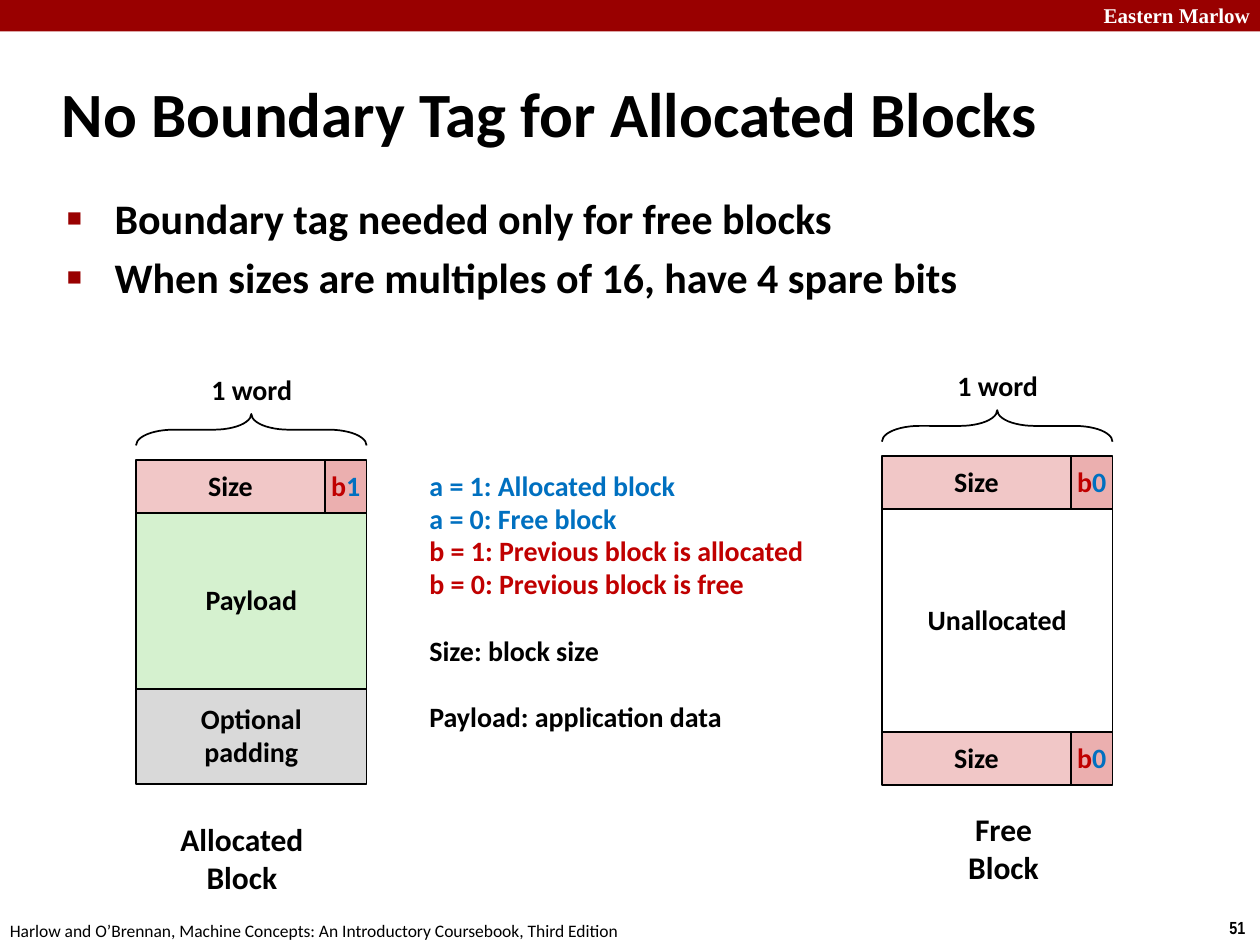
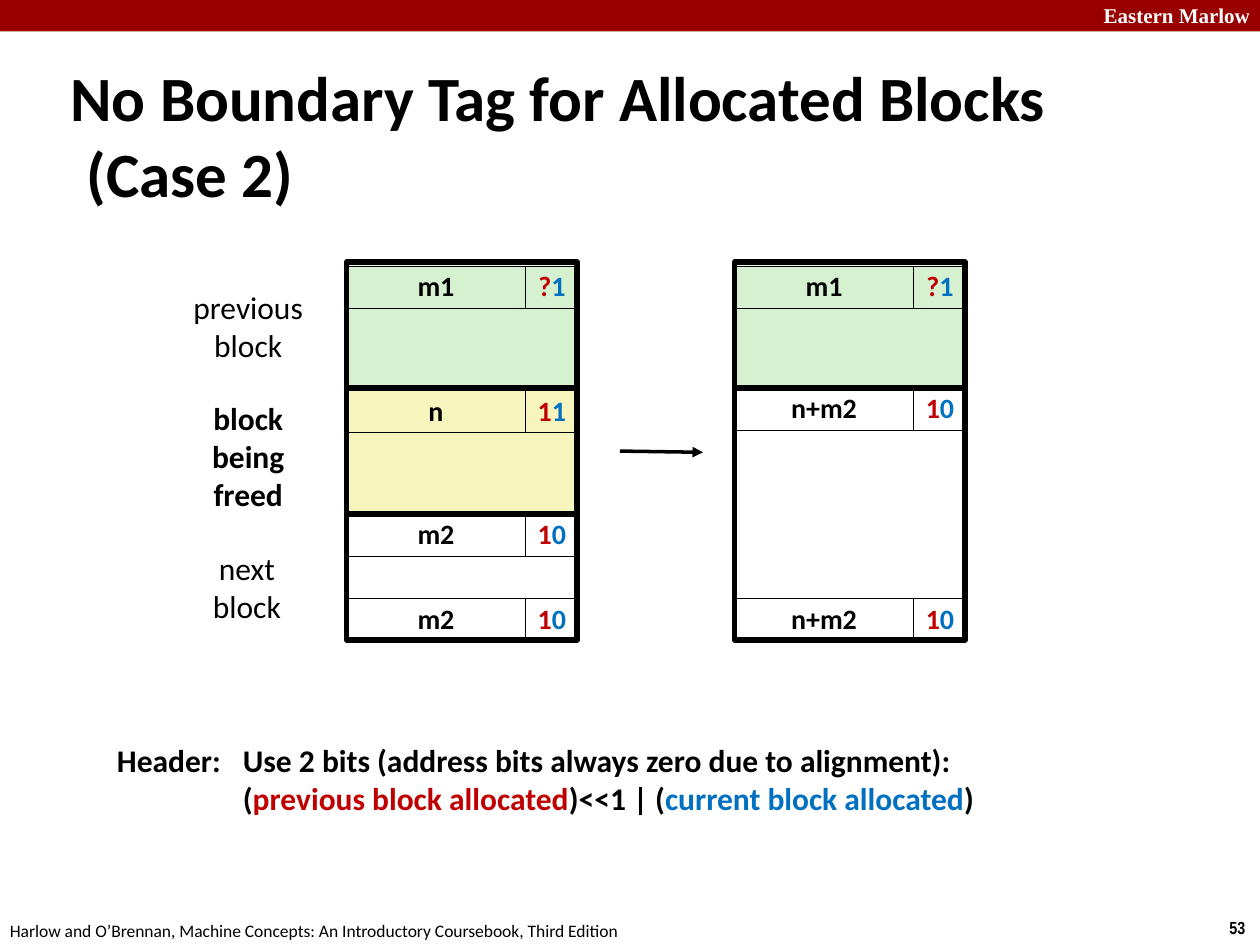
from pptx import Presentation
from pptx.dml.color import RGBColor
from pptx.enum.shapes import MSO_CONNECTOR, MSO_SHAPE
from pptx.enum.text import MSO_ANCHOR, PP_ALIGN
from pptx.oxml.ns import qn
from pptx.util import Inches, Pt
from lxml import etree

RECT, BRACE = MSO_SHAPE.RECTANGLE, MSO_SHAPE.RIGHT_BRACE
STRAIGHT = MSO_CONNECTOR.STRAIGHT
LEFT, CENTER, RIGHT = PP_ALIGN.LEFT, PP_ALIGN.CENTER, PP_ALIGN.RIGHT
TOP, MIDDLE = MSO_ANCHOR.TOP, MSO_ANCHOR.MIDDLE

BLACK, WHITE, BAND = "000000", "FFFFFF", "990000"
RED, BLUE = "C00000", "0070C0"
PINK, ROSE, GREEN, GRAY, YELLOW = "F1C7C7", "EBAFAF", "D5F1CF", "D9D9D9", "F6F5BD"

# Shared content
SCHOOL = "Eastern Marlow"
SOURCE = ("Harlow and O’Brennan, Machine Concepts: "
          "An Introductory Coursebook, Third Edition")

# Slide 1 content
BULLETS = ["Boundary tag needed only for free blocks",
           "When sizes are multiples of 16, have 4 spare bits"]
LEGEND = [[("a = 1: Allocated block", BLUE)],
          [("a = 0: Free block", BLUE)],
          [("b = 1: Previous block is allocated", RED)],
          [("b = 0: Previous block is free", RED)],
          "Size: block size",
          "Payload: application data"]
LEGEND_GAPS = (4, 5)
# Rows: height, fill, text lines, second bit (None for a full-width row)
FORMATS = [
    dict(x=1.08, y=3.65, caption=["Allocated", "Block"], caption_at=(1.33, 6.46, 1.18, 0.71),
         rows=[(0.42, PINK, ["Size"], "1"),
               (1.4, GREEN, ["Payload"], None),
               (0.75, GRAY, ["Optional", "padding"], None)]),
    dict(x=7, y=3.62, caption=["Free", "Block"], caption_at=(7.58, 6.38, 0.77, 0.71),
         rows=[(0.42, PINK, ["Size"], "0"),
               (1.77, None, ["Unallocated"], None),
               (0.42, PINK, ["Size"], "0")]),
]

# Slide 2 content
# Blocks: fill, label, two bits, height in rows, has footer, header offset
HEAPS = [
    (2.75, [(GREEN, "m1", "?1", 3, False, 0.03),
            (YELLOW, "n", "11", 3, False, 0.02),
            (WHITE, "m2", "10", 3, True, 0)]),
    (5.83, [(GREEN, "m1", "?1", 3, False, 0.03),
            (WHITE, "n+m2", "10", 6, True, 0)]),
]
SIDE_LABELS = [(["previous", "block"], (1.42, 2.24, 1.1, 0.71), False),
               (["block", "being", "freed"], (1.58, 3.12, 0.78, 1.01), True),
               (["next", "block"], (1.58, 4.31, 0.76, 0.71), False)]
HEADER_NOTE = ["Header:\tUse 2 bits (address bits always zero due to alignment):",
               [("\t(", BLACK), ("previous block allocated", RED), (")<<1 | (", BLACK),
                ("current block allocated", BLUE), (")", BLACK)]]

WORD_W = 1.83
HEAP_TOP, ROW_H, LABEL_W, BITS_W = 2.08, 1 / 3, 1.42, 0.42


def rgb(color):
    return RGBColor.from_string(color)


def box(at):
    return [Inches(v) for v in at]


def write(tf, paras, size=16, color=BLACK, bold=True, font="Calibri", align=LEFT,
          anchor=TOP, wrap=False, spacing=None, before=None, hang=None):
    """Fill a text frame; a paragraph is a string or a list of (text, colour)."""
    tf.word_wrap, tf.vertical_anchor = wrap, anchor
    for i, para in enumerate(paras):
        p = tf.paragraphs[0] if i == 0 else tf.add_paragraph()
        p.alignment = align
        if spacing:
            p.line_spacing = spacing
        if before is not None:
            p.space_before = Pt(before)
        if hang:
            pPr = p._p.get_or_add_pPr()
            pPr.set("marL", str(Inches(hang)))
            pPr.set("indent", str(-Inches(hang)))
        for text, run_color in [(para, color)] if isinstance(para, str) else para:
            r = p.add_run()
            r.text = text
            r.font.size, r.font.bold, r.font.name = Pt(size), bold, font
            r.font.color.rgb = rgb(run_color)
    return tf


def add_text(s, at, paras, **fmt):
    return write(s.shapes.add_textbox(*box(at)).text_frame, paras, **fmt)


def add_shape(s, at, fill=None, line=1, paras=(), kind=RECT):
    sp = s.shapes.add_shape(kind, *box(at))
    sp.shadow.inherit = False
    if fill:
        sp.fill.solid()
        sp.fill.fore_color.rgb = rgb(fill)
    else:
        sp.fill.background()
    if line:
        sp.line.color.rgb = rgb(BLACK)
        sp.line.width = Pt(line)
    else:
        sp.line.fill.background()
    if paras:
        write(sp.text_frame, paras, align=CENTER, anchor=MIDDLE, spacing=0.98)
    return sp


def bits(pair):
    return [[(pair[0], RED), (pair[1], BLUE)]]


def place(ph, at, paras, **fmt):
    ph.left, ph.top, ph.width, ph.height = box(at)
    return write(ph.text_frame, paras, wrap=True, **fmt)


def new_slide(prs, layout, title, title_at, number):
    s = prs.slides.add_slide(prs.slide_layouts[layout])
    add_shape(s, (0, 0, 10, 0.25), BAND, line=0)
    add_text(s, (8.5, -0.03, 1.52, 0.3), [SCHOOL], size=12, color=WHITE,
             font="Times New Roman", align=RIGHT)
    add_text(s, (9.66, 7.23, 0.34, 0.27), [number], size=10, font="Arial Narrow")
    add_text(s, (-0.02, 7.25, 5.08, 0.27), [SOURCE], size=10, bold=False, wrap=True)
    place(s.shapes.title, title_at, [title], size=36, anchor=MIDDLE, hang=0.13)
    return s


def add_bullets(tf):
    for p in tf.paragraphs:
        pPr = p._p.get_or_add_pPr()
        clr = etree.SubElement(pPr, qn("a:buClr"))
        etree.SubElement(clr, qn("a:srgbClr"), val=BAND)
        etree.SubElement(pPr, qn("a:buSzPct"), val="60000")
        etree.SubElement(pPr, qn("a:buChar"), char="■")


def add_arrow(s, x1, y1, x2, y2):
    c = s.shapes.add_connector(STRAIGHT, *box((x1, y1, x2, y2)))
    c.line.color.rgb = rgb(BLACK)
    c.line.width = Pt(2)
    etree.SubElement(c.line._get_or_add_ln(), qn("a:tailEnd"), type="triangle")
    etree.SubElement(c._element.spPr, qn("a:effectLst"))


def draw_format(s, x, y, rows, caption, caption_at):
    # Word-width brace above the block
    brace_w = 0.25
    brace = add_shape(s, (x + (WORD_W - brace_w) / 2, y - 0.24 - WORD_W / 2, brace_w, WORD_W),
                      kind=BRACE)
    brace.rotation = 270
    brace.adjustments[0] = 1.19
    add_text(s, (x + 0.5, y - 0.73, 0.85, 0.37), ["1 word"], spacing=0.98)
    # Stacked rows
    size_w = 1.5
    for h, fill, lines, bit in rows:
        add_shape(s, (x, y, size_w if bit else WORD_W, h), fill, paras=lines)
        if bit:
            add_shape(s, (x + size_w, y, WORD_W - size_w, h), ROSE, paras=bits("b" + bit))
        y += h
    add_text(s, caption_at, caption, size=18, align=CENTER)


def draw_tag(s, x, y, fill, label, pair):
    add_shape(s, (x, y, LABEL_W, ROW_H), fill, 0.25, [label])
    add_shape(s, (x + LABEL_W, y, BITS_W, ROW_H), fill, 0.25, bits(pair))


def draw_heap(s, x, blocks):
    y = HEAP_TOP
    for fill, label, pair, rows, footer, offset in blocks:
        body_h = (rows - 1 - footer) * ROW_H
        add_shape(s, (x, y + offset + ROW_H, WORD_W, body_h), fill, 0.25)
        draw_tag(s, x, y + offset, fill, label, pair)
        if footer:
            draw_tag(s, x, y + (rows - 1) * ROW_H, fill, label, pair)
        add_shape(s, (x, y, WORD_W, rows * ROW_H), line=3)
        y += rows * ROW_H


def main():
    prs = Presentation()
    prs.slide_width, prs.slide_height = Inches(10), Inches(7.5)

    # Slide 1: block formats
    s = new_slide(prs, 1, "No Boundary Tag for Allocated Blocks",
                  (0.39, 0.48, 8.3, 0.83), "51")
    add_bullets(place(s.placeholders[1], (0.43, 1.48, 9.23, 0.98), BULLETS,
                      size=24, before=4.8, hang=0.38))
    for block in FORMATS:
        draw_format(s, **block)
    legend = add_text(s, (3.31, 3.68, 3.21, 2.21), LEGEND, spacing=0.98)
    for i in LEGEND_GAPS:
        legend.paragraphs[i].space_before = Pt(19)

    # Slide 2: freeing a block before a free one
    s = new_slide(prs, 5, "No Boundary Tag for Allocated Blocks (Case 2)",
                  (0.46, 0.75, 9.08, 0.63), "53")
    for x, blocks in HEAPS:
        draw_heap(s, x, blocks)
    add_arrow(s, 4.92, 3.58, 5.58, 3.59)
    for lines, at, bold in SIDE_LABELS:
        add_text(s, at, lines, size=18, bold=bold, align=CENTER)
    add_text(s, (0.83, 5.83, 7.06, 0.71), HEADER_NOTE, size=18, hang=1)

    prs.save("out.pptx")


if __name__ == "__main__":
    main()
